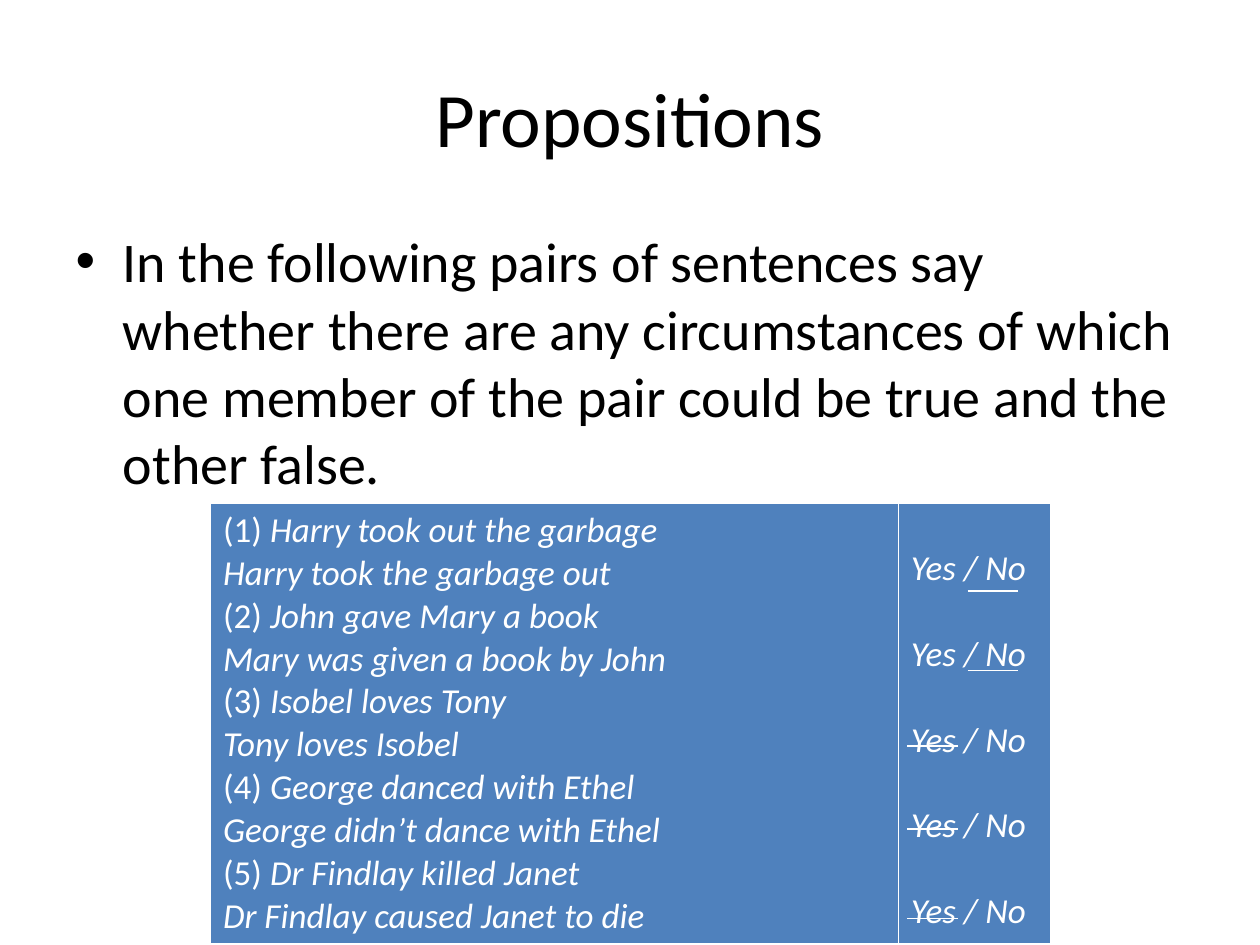
from pptx import Presentation
from pptx.dml.color import RGBColor
from pptx.enum.shapes import MSO_CONNECTOR
from pptx.enum.text import PP_ALIGN
from pptx.oxml.ns import qn
from pptx.util import Inches, Pt
from lxml import etree

# Content
TITLE = "Propositions"
TASK = ("In the following pairs of sentences say whether there are any circumstances "
        "of which one member of the pair could be true and the other false.")
CHOICE = "Yes / No"
# first sentence, second sentence, marked word, height of its mark
PAIRS = [
    ("Harry took out the garbage", "Harry took the garbage out", "No", 4.69),
    ("John gave Mary a book", "Mary was given a book by John", "No", 5.32),
    ("Isobel loves Tony", "Tony loves Isobel", "Yes", 5.92),
    ("George danced with Ethel", "George didn’t dance with Ethel", "Yes", 6.58),
    ("Dr Findlay killed Janet", "Dr Findlay caused Janet to die", "Yes", 7.29),
]

# Layout
TABLE_LEFT, TABLE_TOP, TABLE_HEIGHT = 1.67, 3.99, 3.43
COLUMNS = (5.46, 1.21)
MARK_LEFT = {"Yes": 7.2, "No": 7.68}
MARK_WIDTH = 0.4
LINE_HEIGHT = 24.4  # one 20 pt line, in points
FONT, WHITE, BLUE, BLACK = "Calibri", "FFFFFF", "4F81BD", "000000"


def colour(value):
    return RGBColor.from_string(value)


def style(paragraph, size, text_colour, italic=None):
    font = paragraph.font
    font.name, font.size, font.italic = FONT, Pt(size), italic
    font.color.rgb = colour(text_colour)


def add_paragraph(frame, first):
    paragraph = frame.paragraphs[0] if first else frame.add_paragraph()
    style(paragraph, 20, WHITE, italic=True)
    paragraph.font.bold = False
    return paragraph


presentation = Presentation()
presentation.slide_width, presentation.slide_height = Inches(10), Inches(7.5)
slide = presentation.slides.add_slide(presentation.slide_layouts[1])

# Title and task
title, task = slide.placeholders
for holder, text, size, top, height in ((title, TITLE, 44, 0.3, 1.25),
                                        (task, TASK, 32, 1.75, 4.95)):
    holder.left, holder.top = Inches(0.5), Inches(top)
    holder.width, holder.height = Inches(9), Inches(height)
    holder.text_frame.text = text
    style(holder.text_frame.paragraphs[0], size, BLACK)
title.text_frame.paragraphs[0].alignment = PP_ALIGN.CENTER

# Table of sentence pairs
table = slide.shapes.add_table(
    1, len(COLUMNS), Inches(TABLE_LEFT), Inches(TABLE_TOP),
    Inches(sum(COLUMNS)), Inches(TABLE_HEIGHT)).table
for column, width in zip(table.columns, COLUMNS):
    column.width = Inches(width)
sentences, answers = table.rows[0].cells
for cell in (sentences, answers):
    cell.fill.solid()
    cell.fill.fore_color.rgb = colour(BLUE)
answers.margin_top = Inches(0.05) + Pt(22)

for number, (first, second, _, _) in enumerate(PAIRS, 1):
    opening = add_paragraph(sentences.text_frame, number == 1)
    label = opening.add_run()
    label.text = f"({number}) "
    label.font.italic = False
    opening.add_run().text = first
    add_paragraph(sentences.text_frame, False).text = second

    answer = add_paragraph(answers.text_frame, number == 1)
    answer.text = CHOICE
    if number > 1:
        answer.space_before = Pt(LINE_HEIGHT)

# Marks on the answers
for _, _, word, y in PAIRS:
    left = MARK_LEFT[word]
    mark = slide.shapes.add_connector(
        MSO_CONNECTOR.STRAIGHT, Inches(left), Inches(y),
        Inches(left + MARK_WIDTH), Inches(y))
    mark.line.color.rgb = colour(WHITE)
    mark.line.width = Pt(0.75)
    etree.SubElement(mark._element.spPr, qn("a:effectLst"))

presentation.save("out.pptx")
